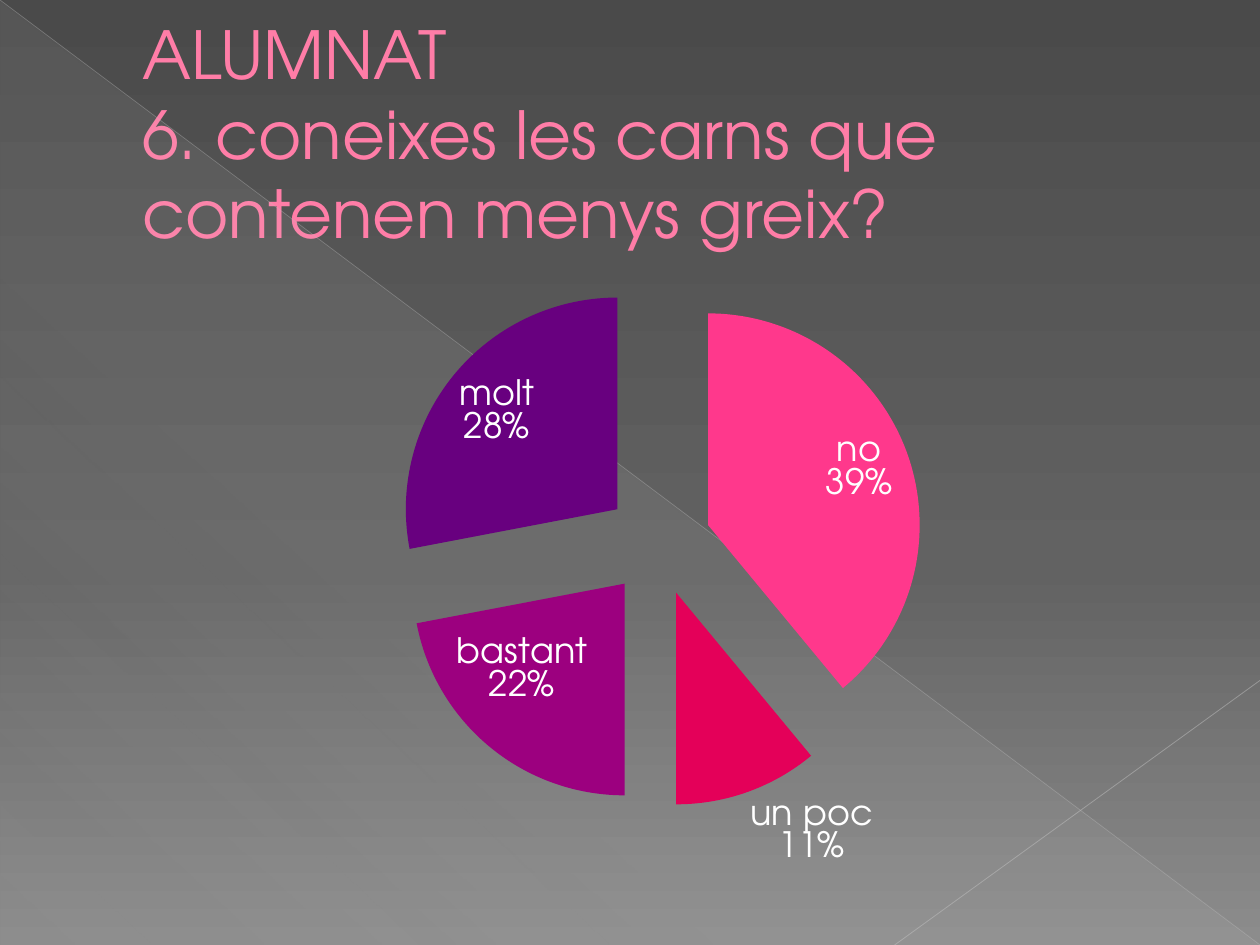
from typing import NamedTuple

from lxml import etree
from pptx import Presentation
from pptx.chart.data import CategoryChartData
from pptx.dml.color import RGBColor
from pptx.enum.chart import XL_CHART_TYPE as ChartType, XL_LABEL_POSITION as LabelPosition
from pptx.enum.shapes import MSO_CONNECTOR as Connector, MSO_SHAPE as Preset
from pptx.enum.text import MSO_ANCHOR as Anchor, MSO_AUTO_SIZE as AutoSize, PP_ALIGN as Align
from pptx.oxml import parse_xml
from pptx.oxml.ns import nsdecls, qn
from pptx.util import Inches, Pt

WIDTH, HEIGHT = Inches(10), Inches(7.5)
FONT = "TeX Gyre Adventor"
WHITE = RGBColor(0xFF, 0xFF, 0xFF)
TITLE_PINK = RGBColor(0xFF, 0x7D, 0xA7)
TITLE_EDGE = RGBColor(0xB1, 0x27, 0x61)
DARK, MIDDLE, PALE = (RGBColor(*[level] * 3) for level in (0x4A, 0x62, 0x8C))
VEIL = RGBColor(0xD2, 0xD2, 0xD2)
LONG_LINE = RGBColor(0xBF, 0xBF, 0xBF)
SHORT_LINE = RGBColor(0xC6, 0xC6, 0xC6)


class Stop(NamedTuple):
    position: int
    color: RGBColor
    opacity: int = 100


class Diagonal(NamedTuple):
    """Ends as shares of the slide's width and height."""
    start: tuple[float, float]
    end: tuple[float, float]
    color: RGBColor
    points: float
    opacity: int


class Slice(NamedTuple):
    name: str
    value: int
    color: RGBColor


DIAGONALS = [
    Diagonal((0, 0), (1, 1), LONG_LINE, 0.39, 35),
    Diagonal((1, 0.72), (0.71, 1), SHORT_LINE, 0.47, 45),
]
SLICES = [
    Slice("no", 39, RGBColor(0xFF, 0x38, 0x8C)),
    Slice("un poc", 11, RGBColor(0xE4, 0x00, 0x59)),
    Slice("bastant", 22, RGBColor(0x9C, 0x00, 0x7F)),
    Slice("molt", 28, RGBColor(0x68, 0x00, 0x7F)),
]
TITLE_LINES = ["ALUMNAT", "6. coneixes les carns que contenen menys greix?"]


def set_gradient(fill, holder, stops: list[Stop], angle: int) -> None:
    """Put a linear gradient, turned clockwise, in place of the holder's fill."""
    fill.solid()
    marks = "".join(
        f'<a:gs pos="{stop.position * 1000}"><a:srgbClr val="{stop.color}">'
        f'<a:alpha val="{stop.opacity * 1000}"/></a:srgbClr></a:gs>'
        for stop in stops
    )
    gradient = parse_xml(
        f'<a:gradFill {nsdecls("a")} rotWithShape="1"><a:gsLst>{marks}</a:gsLst>'
        f'<a:lin ang="{angle * 60000}" scaled="0"/></a:gradFill>'
    )
    solid = next(holder.iter(qn("a:solidFill")))
    solid.getparent().replace(solid, gradient)


def add_veil(page) -> None:
    veil = page.shapes.add_shape(Preset.RIGHT_TRIANGLE, 0, 0, WIDTH, HEIGHT)
    veil.shadow.inherit = False
    veil.line.fill.background()
    stops = [Stop(0, VEIL, 10), Stop(70, VEIL, 8), Stop(100, VEIL, 1)]
    set_gradient(veil.fill, veil._element.spPr, stops, 133)


def add_diagonal(page, diagonal: Diagonal) -> None:
    (x1, y1), (x2, y2) = diagonal.start, diagonal.end
    line = page.shapes.add_connector(
        Connector.STRAIGHT,
        int(x1 * WIDTH), int(y1 * HEIGHT), int(x2 * WIDTH), int(y2 * HEIGHT),
    )
    line.line.color.rgb = diagonal.color
    line.line.width = Pt(diagonal.points)
    properties = line._element.spPr
    color = next(properties.iter(qn("a:srgbClr")))
    etree.SubElement(color, qn("a:alpha"), val=str(diagonal.opacity * 1000))
    etree.SubElement(properties, qn("a:effectLst"))


def fill_title(page) -> None:
    title = page.shapes.title
    title.left, title.top = Inches(0.5), Inches(0.29)
    title.width, title.height = Inches(9), Inches(1.53)
    frame = title.text_frame
    frame.word_wrap = True
    frame.auto_size = AutoSize.NONE
    frame.vertical_anchor = Anchor.MIDDLE
    para = frame.paragraphs[0]
    para.alignment = Align.LEFT
    indents = para._p.get_or_add_pPr()
    indents.set("marL", str(Inches(0.53)))
    indents.set("indent", "0")
    for number, words in enumerate(TITLE_LINES):
        if number:
            para.add_line_break()
        span = para.add_run()
        span.text = words
        span.font.name = FONT
        span.font.size = Pt(37.8)
        span.font.color.rgb = TITLE_PINK
        span.font._element.insert(0, parse_xml(
            f'<a:ln {nsdecls("a")} w="{Pt(0.5)}"><a:solidFill>'
            f'<a:srgbClr val="{TITLE_EDGE}"/></a:solidFill></a:ln>'
        ))


def add_pie(page) -> None:
    data = CategoryChartData()
    data.categories = [part.name for part in SLICES]
    data.add_series("Series 1", [part.value for part in SLICES])
    chart = page.shapes.add_chart(
        ChartType.PIE, Inches(0.5), Inches(2.06), Inches(9), Inches(5), data
    ).chart
    chart.has_title = False
    chart.has_legend = False
    chart.font.name = FONT
    chart.font.size = Pt(10)
    chart.font.color.rgb = WHITE
    plot = chart.plots[0]
    plot.vary_by_categories = True
    series = plot.series[0]
    for index, part in enumerate(SLICES):
        fill = series.points[index].format.fill
        fill.solid()
        fill.fore_color.rgb = part.color

    labels = series.data_labels
    labels.show_value = False
    labels.show_category_name = True
    labels.show_percentage = True
    labels.number_format = "0%"
    labels.number_format_is_linked = False
    labels.position = LabelPosition.BEST_FIT
    labels.font.name = FONT
    labels.font.size = Pt(20)
    labels.font.color.rgb = WHITE
    labels._element.find(qn("c:showBubbleSize")).addnext(
        parse_xml(f'<c:separator {nsdecls("c")}>\n</c:separator>'))

    series._element.find(qn("c:dPt")).addprevious(
        parse_xml(f'<c:explosion {nsdecls("c")} val="25"/>'))
    area = chart._chartSpace.chart.plotArea
    for old in area.findall(qn("c:layout")):
        area.remove(old)
    shares = {"x": 0.29, "y": 0.03, "w": 0.47, "h": 0.84}
    sizes = "".join(f'<c:{key} val="{share}"/>' for key, share in shares.items())
    area.insert(0, parse_xml(
        f'<c:layout {nsdecls("c")}><c:manualLayout><c:layoutTarget val="inner"/>'
        f'<c:xMode val="edge"/><c:yMode val="edge"/>{sizes}</c:manualLayout></c:layout>'))


def main() -> None:
    deck = Presentation()
    deck.slide_width, deck.slide_height = WIDTH, HEIGHT
    page = deck.slides.add_slide(deck.slide_layouts.get_by_name("Title Only"))
    stops = [Stop(0, DARK), Stop(60, MIDDLE), Stop(100, PALE)]
    set_gradient(page.background.fill, page._element.cSld, stops, 90)
    add_veil(page)
    for diagonal in DIAGONALS:
        add_diagonal(page, diagonal)
    fill_title(page)
    add_pie(page)
    deck.save("out.pptx")


if __name__ == "__main__":
    main()
